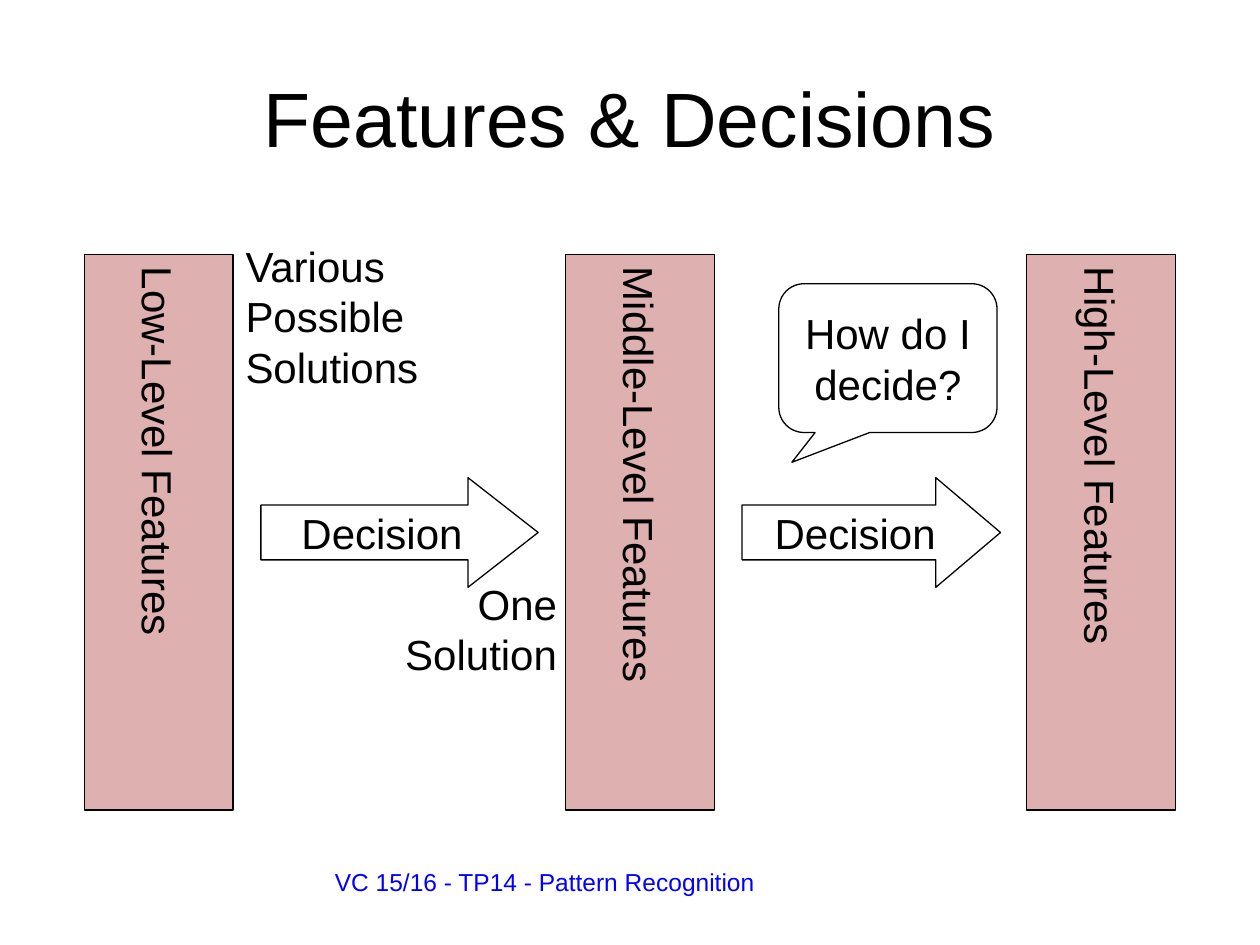
from pptx import Presentation
from pptx.dml.color import RGBColor
from pptx.enum.shapes import MSO_SHAPE
from pptx.enum.text import MSO_ANCHOR, PP_ALIGN
from pptx.oxml.ns import qn
from pptx.util import Cm, Pt
from lxml.etree import SubElement

BLACK = RGBColor(0x00, 0x00, 0x00)
BLUE = RGBColor(0x00, 0x00, 0xFF)
DARK_RED = RGBColor(0x99, 0x00, 0x00)


def write(shape, text, size=24, color=BLACK, align=PP_ALIGN.CENTER,
          anchor=MSO_ANCHOR.MIDDLE, wrap=False):
    frame = shape.text_frame
    frame.word_wrap = wrap
    frame.vertical_anchor = anchor
    frame.text = text
    paragraph = frame.paragraphs[0]
    paragraph.alignment = align
    paragraph.font.name = "Arial"
    paragraph.font.size = Pt(size)
    paragraph.font.color.rgb = color


def add_outlined(preset, left, top, width, height):
    shape = slide.shapes.add_shape(preset, Cm(left), Cm(top), Cm(width), Cm(height))
    shape.shadow.inherit = False
    shape.fill.background()
    shape.line.color.rgb = BLACK
    shape.line.width = Pt(0.75)
    return shape


prs = Presentation()
prs.slide_width, prs.slide_height = Cm(25.4), Cm(19.05)
slide = prs.slides.add_slide(prs.slide_layouts[5])

# Title
title = slide.shapes.title
title.left, title.top, title.width, title.height = Cm(1.27), Cm(0.76), Cm(22.86), Cm(3.18)
write(title, "Features & Decisions", size=44, wrap=True)

# Feature levels: translucent columns with vertical text
for level, left in (("Low", 1.7), ("Middle", 11.4), ("High", 20.7)):
    column = add_outlined(MSO_SHAPE.RECTANGLE, left, 5.13, 3, 11.2)
    column.fill.solid()
    column.fill.fore_color.rgb = DARK_RED
    tint = column.element.spPr.find(qn("a:solidFill"))[0]
    SubElement(tint, qn("a:alpha"), val="31000")
    write(column, f"{level}-Level Features")
    column.element.txBody.find(qn("a:bodyPr")).set("vert", "eaVert")

# Decision arrows between the columns
for left, width, head in ((5.26, 5.59, 0.64), (14.96, 5.21, 0.59)):
    decision = add_outlined(MSO_SHAPE.RIGHT_ARROW, left, 9.63, width, 2.21)
    decision.adjustments[1] = head
    write(decision, "Decision")

# Solutions before and after the first decision, and the footer
for text, left, top, width, height, align, size, color in (
    ("Various\vPossible\vSolutions", 4.7, 4.72, 3.99, 3.3, PP_ALIGN.LEFT, 24, BLACK),
    ("One\vSolution", 7.9, 11.53, 3.58, 2.29, PP_ALIGN.RIGHT, 24, BLACK),
    ("VC 15/16 - TP14 - Pattern Recognition", 6.5, 17.35, 15.6, 1.32,
     PP_ALIGN.LEFT, 14, BLUE),
):
    label = slide.shapes.add_textbox(Cm(left), Cm(top), Cm(width), Cm(height))
    write(label, text, size, color, align, MSO_ANCHOR.TOP, wrap=color == BLUE)

# Question about the second decision
question = add_outlined(MSO_SHAPE.ROUNDED_RECTANGULAR_CALLOUT, 15.7, 5.72, 4.4, 3)
question.adjustments[0] = -0.44
question.adjustments[1] = 0.7
question.adjustments[2] = 0.17
write(question, "How do I decide?", wrap=True)

prs.save("out.pptx")
